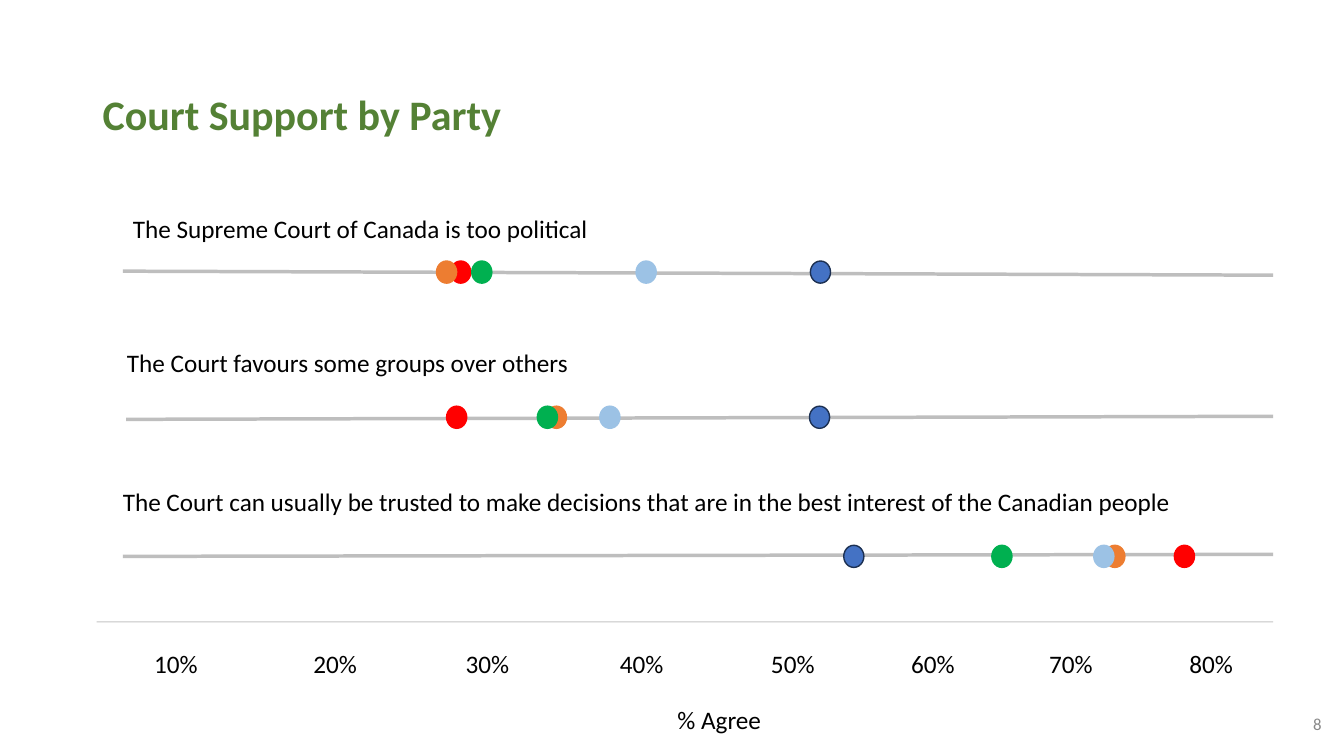
"""Build the slide that compares court support by party on three dot scales."""
import dataclasses

import lxml.etree
import pptx
import pptx.dml.color
import pptx.enum.shapes
import pptx.enum.text
import pptx.oxml.ns
import pptx.slide
import pptx.util

WIDTH = pptx.util.Inches(13.33)
HEIGHT = pptx.util.Inches(7.5)
DOT_WIDTH, DOT_HEIGHT = 1.5, 2.93
SCALE_RIGHT = 94.73
TICK_TOP, TICK_WIDTH, LABEL_HEIGHT = 85.07, 5.4, 5.33
TICK_LEFTS = (10.73, 22.58, 33.9, 45.38, 56.63, 67.05, 77.33, 87.75)

COLOURS = {
    "title": "548135",
    "text": "000000",
    "number": "888888",
    "scale": "7F7F7F",
    "blue": "4472C4",
    "blue outline": "1C3052",
    "red": "FF0000",
    "orange": "ED7D31",
    "light blue": "9CC2E5",
    "green": "00B050",
}
PARTIES = ("blue", "red", "orange", "light blue", "green")

Align = pptx.enum.text.PP_ALIGN
Anchor = pptx.enum.text.MSO_ANCHOR
Fit = pptx.enum.text.MSO_AUTO_SIZE


@dataclasses.dataclass(frozen=True)
class Box:
    """A rectangle in percent of the slide's width and height."""

    left: float
    top: float
    width: float
    height: float


@dataclasses.dataclass(frozen=True)
class Statement:
    """A survey statement, its scale line and one dot for each party."""

    wording: str
    label: Box
    scale_left: float
    scale_start: float
    scale_end: float
    dot_top: float
    dot_lefts: tuple[float, ...]


STATEMENTS = (
    Statement("The Supreme Court of Canada is too political",
              Box(9.15, 27.6, 43.43, LABEL_HEIGHT), 9.15, 35.87, 36.4,
              34.53, (60.3, 33.53, 32.48, 47.33, 35.1)),
    Statement("The Court favours some groups over others",
              Box(8.7, 45.33, 39.15, LABEL_HEIGHT), 9.38, 55.47, 55.07,
              53.73, (60.23, 33.23, 40.65, 44.63, 39.98)),
    Statement("The Court can usually be trusted to make decisions that are "
              "in the best interest of the Canadian people",
              Box(8.4, 63.73, 89.25, LABEL_HEIGHT), 9.15, 73.6, 73.33,
              72.13, (62.78, 87.38, 82.2, 81.38, 73.8)),
)


def across(share: float) -> int:
    """Turn a percentage of the slide's width into a length."""
    return round(WIDTH * share / 100)


def down(share: float) -> int:
    """Turn a percentage of the slide's height into a length."""
    return round(HEIGHT * share / 100)


def frame(box: Box) -> tuple[int, int, int, int]:
    """Turn a box into left, top, width and height."""
    return across(box.left), down(box.top), across(box.width), down(box.height)


def colour(name: str) -> pptx.dml.color.RGBColor:
    """Look up a colour by name."""
    return pptx.dml.color.RGBColor.from_string(COLOURS[name])


def add_text(slide: pptx.slide.Slide, wording: str, box: Box, size: float = 18,
             ink: str = "text", bold: bool = False, align: Align = Align.LEFT,
             anchor: Anchor = Anchor.TOP,
             fit: Fit = Fit.SHAPE_TO_FIT_TEXT) -> None:
    """Write one line of text in a box."""
    text_frame = slide.shapes.add_textbox(*frame(box)).text_frame
    text_frame.word_wrap = True
    text_frame.auto_size = fit
    text_frame.vertical_anchor = anchor
    text_frame.text = wording
    paragraph = text_frame.paragraphs[0]
    paragraph.alignment = align
    font = paragraph.runs[0].font
    font.name = "Calibri"
    font.size = pptx.util.Pt(size)
    font.bold = bold
    font.color.rgb = colour(ink)


def add_scale(slide: pptx.slide.Slide, left: float, start: float, end: float,
              weight: float, opacity: int) -> None:
    """Draw a translucent grey line to the right edge of the scales."""
    scale = slide.shapes.add_connector(
        pptx.enum.shapes.MSO_CONNECTOR.STRAIGHT,
        across(left), down(start), across(SCALE_RIGHT), down(end))
    scale.line.width = pptx.util.Pt(weight)
    scale.line.color.rgb = colour("scale")
    qn = pptx.oxml.ns.qn
    properties = scale._element.spPr
    tint = properties.find(".//" + qn("a:srgbClr"))
    lxml.etree.SubElement(tint, qn("a:alpha")).set("val", str(opacity * 1000))
    lxml.etree.SubElement(properties, qn("a:effectLst"))


def add_dot(slide: pptx.slide.Slide, party: str, left: float, top: float) -> None:
    """Draw the dot of one party."""
    dot = slide.shapes.add_shape(
        pptx.enum.shapes.MSO_SHAPE.OVAL,
        *frame(Box(left, top, DOT_WIDTH, DOT_HEIGHT)))
    dot.shadow.inherit = False
    dot.fill.solid()
    dot.fill.fore_color.rgb = colour(party)
    dot.line.color.rgb = colour("blue outline" if party == "blue" else party)
    dot.line.width = pptx.util.Pt(1)


def add_statement(slide: pptx.slide.Slide, statement: Statement) -> None:
    """Draw a statement with its scale and dots."""
    add_text(slide, statement.wording, statement.label)
    add_scale(slide, statement.scale_left, statement.scale_start,
              statement.scale_end, 2.5, 50)
    for party, left in zip(PARTIES, statement.dot_lefts):
        add_dot(slide, party, left, statement.dot_top)


def main() -> None:
    """Build and save the slide."""
    deck = pptx.Presentation()
    deck.slide_width, deck.slide_height = WIDTH, HEIGHT
    slide = deck.slides.add_slide(deck.slide_layouts[6])

    add_text(slide, "Court Support by Party", Box(6.9, 5.33, 86.25, 19.33),
             size=30, ink="title", bold=True, anchor=Anchor.MIDDLE, fit=Fit.NONE)
    add_text(slide, "8", Box(76.58, 93.07, 22.5, LABEL_HEIGHT), size=12,
             ink="number", align=Align.RIGHT, anchor=Anchor.MIDDLE, fit=Fit.NONE)
    for statement in STATEMENTS:
        add_statement(slide, statement)

    add_scale(slide, 7.2, 82.27, 82.27, 0.75, 46)
    for step, left in enumerate(TICK_LEFTS, start=1):
        add_text(slide, f"{step * 10}%",
                 Box(left, TICK_TOP, TICK_WIDTH, LABEL_HEIGHT))
    add_text(slide, "% Agree", Box(44.93, 92.53, 17.18, LABEL_HEIGHT),
             align=Align.CENTER)
    deck.save("out.pptx")


if __name__ == "__main__":
    main()
